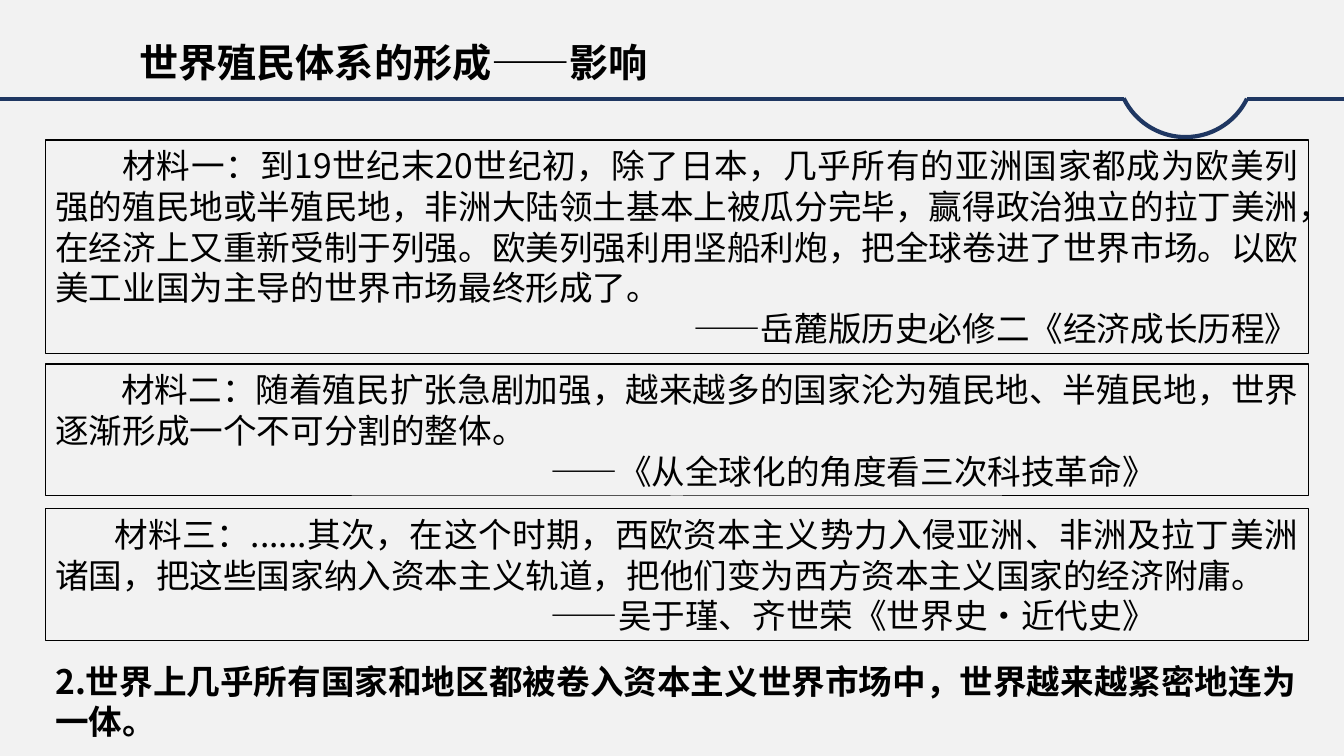
from lxml.etree import SubElement
from pptx import Presentation
from pptx.dml.color import RGBColor
from pptx.enum.shapes import MSO_CONNECTOR, MSO_SHAPE
from pptx.enum.text import MSO_ANCHOR, PP_ALIGN
from pptx.oxml.ns import qn
from pptx.util import Pt

BLACK = RGBColor(0x00, 0x00, 0x00)
NAVY = RGBColor(0x1F, 0x37, 0x62)
PALE_GREY = RGBColor(0xF2, 0xF2, 0xF2)

FONT = "Noto Sans CJK SC"
SLIDE_WIDTH, SLIDE_HEIGHT = 960, 540
BOX_LEFT, BOX_WIDTH = 32.4, 902.2
SOURCE_INDENT = 354


class SlideBuilder:
    """Holds the style and the current slide; all lengths are in points."""

    def __init__(self, slide):
        self.slide = slide
        self.body_size = 24
        self.body_leading = 29
        self.rule_width = 3

    def background(self, color):
        fill = self.slide.background.fill
        fill.solid()
        fill.fore_color.rgb = color

    def style(self, paragraph, size, bold=False, align=PP_ALIGN.LEFT,
              margin=0, indent=0):
        properties = paragraph._p.get_or_add_pPr()
        properties.set("marL", str(Pt(margin)))
        properties.set("indent", str(Pt(indent)))
        paragraph.alignment = align
        font = paragraph.font
        font.size, font.bold, font.name = Pt(size), bold, FONT
        font.color.rgb = BLACK
        SubElement(properties.find(qn("a:defRPr")), qn("a:ea"), typeface=FONT)

    def title(self, text, left, top, width, height):
        title = self.slide.shapes.title
        title.left, title.top = Pt(left), Pt(top)
        title.width, title.height = Pt(width), Pt(height)
        frame = title.text_frame
        frame.text = text
        frame.word_wrap = True
        frame.vertical_anchor = MSO_ANCHOR.MIDDLE
        heading = frame.paragraphs[0]
        heading.line_spacing = 0.8
        self.style(heading, 28, bold=True)

    def rule(self, start, end, y):
        rule = self.slide.shapes.add_connector(
            MSO_CONNECTOR.STRAIGHT, Pt(start), Pt(y), Pt(end), Pt(y))
        rule.line.color.rgb = NAVY
        rule.line.width = Pt(self.rule_width)
        SubElement(rule._element.spPr, qn("a:effectLst"))

    def arc(self, left, top, diameter, rotation, start, end):
        arc = self.slide.shapes.add_shape(
            MSO_SHAPE.ARC, Pt(left), Pt(top), Pt(diameter), Pt(diameter))
        arc.adjustments[0], arc.adjustments[1] = start, end
        arc.rotation = rotation
        arc.shadow.inherit = False
        arc.fill.background()
        arc.line.color.rgb = NAVY
        arc.line.width = Pt(self.rule_width)

    def add_body(self, frame, text, **style):
        paragraph = frame.paragraphs[0]
        if paragraph.runs:
            paragraph = frame.add_paragraph()
        paragraph.text = text
        paragraph.line_spacing = Pt(self.body_leading)
        self.style(paragraph, self.body_size, **style)

    def excerpt(self, top, height, text, indent, source, source_style):
        box = self.slide.shapes.add_shape(
            MSO_SHAPE.RECTANGLE, Pt(BOX_LEFT), Pt(top), Pt(BOX_WIDTH), Pt(height))
        box.shadow.inherit = False
        box.fill.background()
        box.line.color.rgb = BLACK
        box.line.width = Pt(0.75)
        frame = box.text_frame
        frame.word_wrap = True
        frame.vertical_anchor = MSO_ANCHOR.TOP
        self.add_body(frame, text, align=PP_ALIGN.JUSTIFY, indent=indent)
        self.add_body(frame, source, **source_style)

    def conclusion(self, top, height, text):
        box = self.slide.shapes.add_textbox(
            Pt(BOX_LEFT), Pt(top), Pt(BOX_WIDTH), Pt(height))
        box.text_frame.word_wrap = True
        self.add_body(box.text_frame, text, bold=True)


def main():
    deck = Presentation()
    deck.slide_width, deck.slide_height = Pt(SLIDE_WIDTH), Pt(SLIDE_HEIGHT)
    builder = SlideBuilder(deck.slides.add_slide(deck.slide_layouts[5]))

    # Background and header line with its dip
    builder.background(PALE_GREY)
    builder.arc(797.8, 0, 97.9, 153, 139.89, 0.77)
    builder.rule(0, 802.8, 71)
    builder.rule(890.6, SLIDE_WIDTH, 70.8)
    builder.title("世界殖民体系的形成——影响", 92.2, 25.9, 860, 42.5)

    # Source excerpts
    right = {"align": PP_ALIGN.RIGHT}
    indented = {"margin": SOURCE_INDENT}
    excerpts = [
        (100, 152.6,
         "材料一：到19世纪末20世纪初，除了日本，几乎所有的亚洲国家都成为欧美列强的"
         "殖民地或半殖民地，非洲大陆领土基本上被瓜分完毕，赢得政治独立的拉丁美洲，"
         "在经济上又重新受制于列强。欧美列强利用坚船利炮，把全球卷进了世界市场。"
         "以欧美工业国为主导的世界市场最终形成了。",
         48, "——岳麓版历史必修二《经济成长历程》", right),
        (260, 94.3,
         "材料二：随着殖民扩张急剧加强，越来越多的国家沦为殖民地、半殖民地，"
         "世界逐渐形成一个不可分割的整体。",
         47, "——《从全球化的角度看三次科技革命》", indented),
        (363.4, 94.3,
         "材料三：......其次，在这个时期，西欧资本主义势力入侵亚洲、非洲及拉丁美洲诸国，"
         "把这些国家纳入资本主义轨道，把他们变为西方资本主义国家的经济附庸。",
         42, "——吴于瑾、齐世荣《世界史·近代史》", indented),
    ]
    for excerpt in excerpts:
        builder.excerpt(*excerpt)

    # Conclusion
    builder.conclusion(
        468, 65.5,
        "2.世界上几乎所有国家和地区都被卷入资本主义世界市场中，世界越来越紧密地连为一体。")

    deck.save("out.pptx")


if __name__ == "__main__":
    main()
